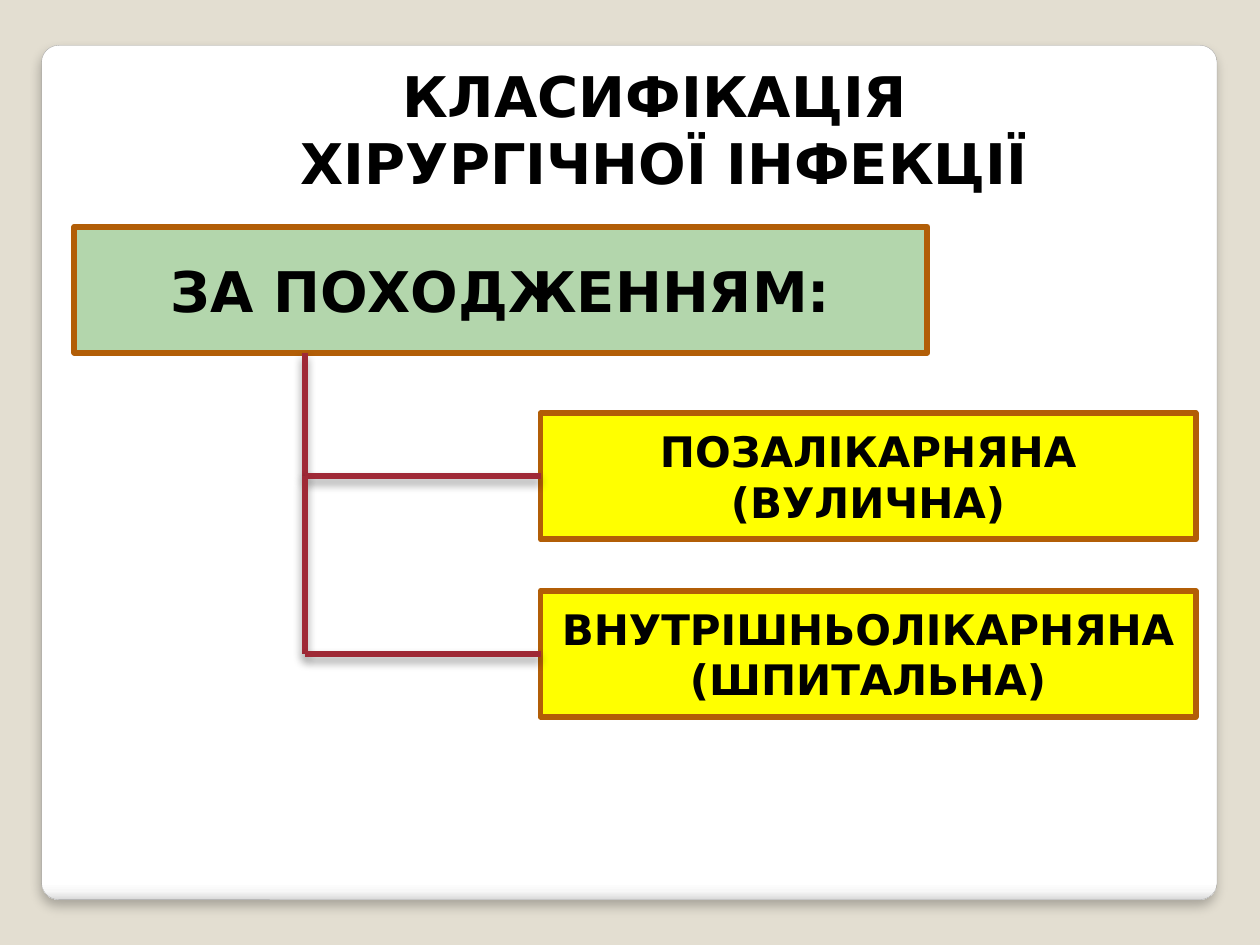
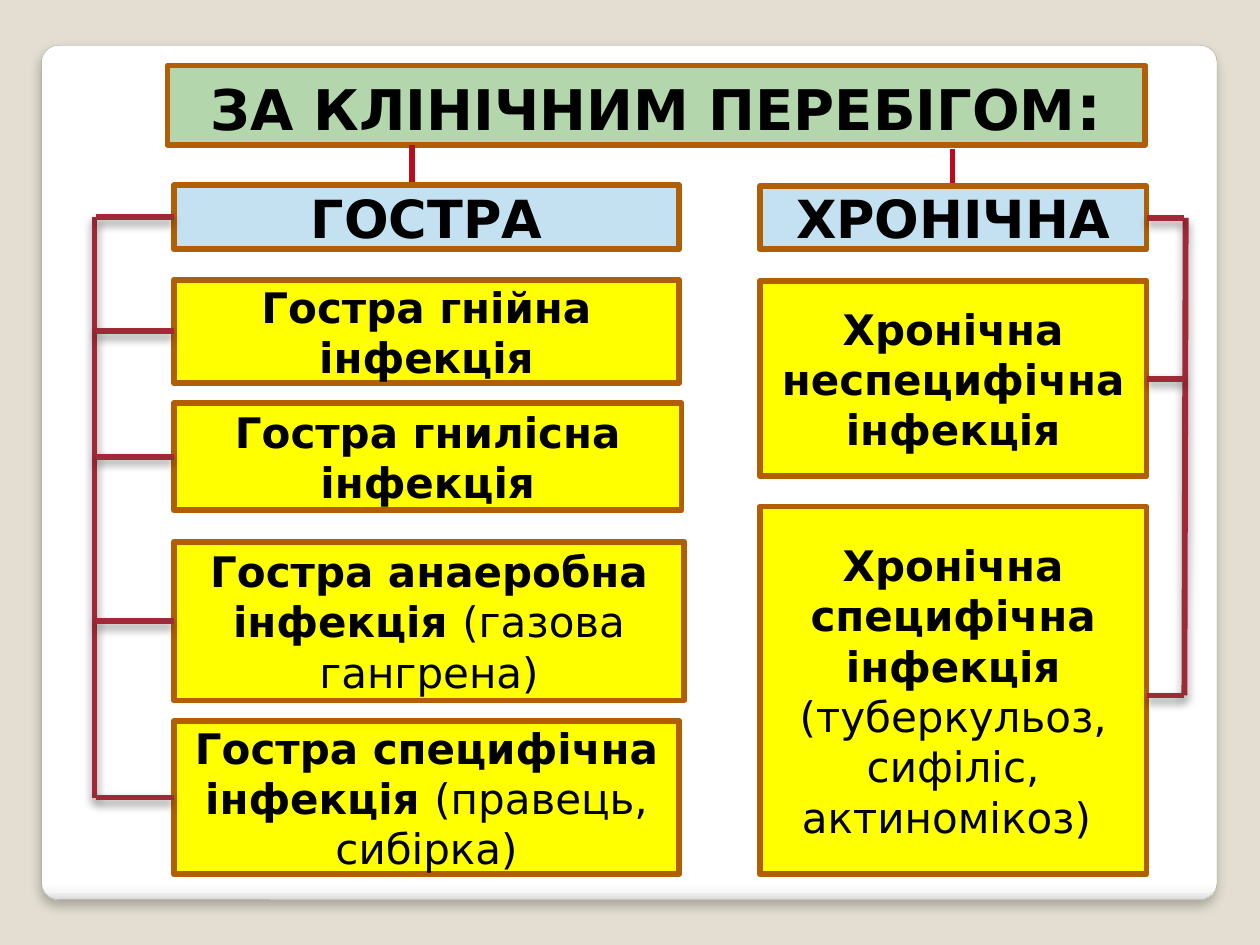
from pptx import Presentation
from pptx.dml.color import RGBColor
from pptx.enum import shapes, text
from pptx.oxml import parse_xml
from pptx.oxml.ns import nsdecls
from pptx.util import Inches, Pt

BEIGE = RGBColor(0xE3, 0xDE, 0xD1)
GREY = RGBColor(0xA4, 0xA4, 0xA4)
GREEN = RGBColor(0xB3, 0xD6, 0xAC)
BLUE = RGBColor(0xC4, 0xE1, 0xF2)
YELLOW = RGBColor(0xFF, 0xFF, 0x00)
BROWN = RGBColor(0xB2, 0x5E, 0x07)
MAROON = RGBColor(0x9F, 0x29, 0x36)
RED = RGBColor(0xBC, 0x0B, 0x1F)
BLACK = RGBColor(0, 0, 0)
FONT = "DejaVu Sans"
STOPS = [(0, "FFFFFF"), (98, "FFFFFF"), (99, "F7F7F7"), (100, "DADADA")]
EFFECT = f"<a:effectLst {nsdecls('a')}>%s</a:effectLst>"
SHADOW = EFFECT % (
    '<a:outerShdw blurRad="%d" dist="%d" dir="5400000" rotWithShape="0">'
    '<a:srgbClr val="000000"><a:alpha val="%d"/></a:srgbClr></a:outerShdw>')


def write(s, x, y, w, h, words, size=24, fill=None, tail="", tail_size=None, tail_bold=False):
    at = [Inches(v) for v in (x, y, w, h)]
    if fill is None:
        sp = s.shapes.add_textbox(*at)
        sp.text_frame.auto_size = text.MSO_AUTO_SIZE.SHAPE_TO_FIT_TEXT
    else:
        sp = s.shapes.add_shape(shapes.MSO_SHAPE.RECTANGLE, *at)
        sp.shadow.inherit = False
        sp.fill.solid()
        sp.fill.fore_color.rgb = fill
        sp.line.color.rgb = BROWN
        sp.line.width = Pt(3.35)
        sp.text_frame.vertical_anchor = text.MSO_ANCHOR.MIDDLE
    tf = sp.text_frame
    tf.word_wrap = True
    for i, part in enumerate(words.split("\n")):
        p = tf.add_paragraph() if i else tf.paragraphs[0]
        p.alignment = text.PP_ALIGN.CENTER
        runs = [(part, size, True)]
        if tail:
            runs.append((tail, tail_size or size, tail_bold))
        for run_text, run_size, bold in runs:
            r = p.add_run()
            r.text = run_text
            r.font.name = FONT
            r.font.size = Pt(run_size)
            r.font.bold = bold
            r.font.color.rgb = BLACK
    return sp


def line(s, x1, y1, x2, y2, color=MAROON, width=3.35, shadow=True, box=None, side=1):
    c = s.shapes.add_connector(shapes.MSO_CONNECTOR.STRAIGHT,
                               Inches(x1), Inches(y1), Inches(x2), Inches(y2))
    if box is not None:
        c.end_connect(box, side)
    c.line.color.rgb = color
    c.line.width = Pt(width)
    effect = SHADOW % (Pt(5.2), Pt(3), 40000) if shadow else EFFECT % ""
    c._element.spPr.append(parse_xml(effect))


prs = Presentation()
prs.slide_width = Inches(10)
prs.slide_height = Inches(7.5)

for _ in range(2):
    s = prs.slides.add_slide(prs.slide_layouts[6])
    s.background.fill.solid()
    s.background.fill.fore_color.rgb = BEIGE
    panel = s.shapes.add_shape(shapes.MSO_SHAPE.ROUNDED_RECTANGLE,
                               Inches(0.33), Inches(0.36), Inches(9.33), Inches(6.78))
    panel.adjustments[0] = 0.02
    panel.fill.gradient()
    panel.fill.gradient_angle = 270
    stops = "".join(f'<a:gs pos="{pos * 1000}"><a:srgbClr val="{color}"/></a:gs>'
                    for pos, color in STOPS)
    grad = panel._element.spPr.find(".//{*}gsLst")
    grad.getparent().replace(grad, parse_xml(f"<a:gsLst {nsdecls('a')}>{stops}</a:gsLst>"))
    panel.line.color.rgb = GREY
    panel.line.width = Pt(0.16)
    panel._element.spPr.append(parse_xml(SHADOW % (Pt(6), Pt(4), 25000)))

origin, course = prs.slides

write(origin, 1.77, 0.44, 7.01, 1.18, "КЛАСИФІКАЦІЯ \nХІРУРГІЧНОЇ ІНФЕКЦІЇ", size=32)
write(origin, 0.59, 1.8, 6.77, 1, "ЗА ПОХОДЖЕННЯМ:", size=32, fill=GREEN)
trunk_x, trunk_y = 2.42, 2.8
for y, words in [(3.28, "ПОЗАЛІКАРНЯНА (ВУЛИЧНА)"),
                 (4.69, "ВНУТРІШНЬОЛІКАРНЯНА\n(ШПИТАЛЬНА)")]:
    sp = write(origin, 4.29, y, 5.2, 1, words, fill=YELLOW)
    mid = y + 0.5
    line(origin, trunk_x, trunk_y, trunk_x, mid)
    line(origin, trunk_x, mid, 4.29, mid, box=sp)
    trunk_y = mid

write(course, 1.33, 0.52, 7.76, 0.63, "ЗА КЛІНІЧНИМ ПЕРЕБІГОМ", size=32, fill=GREEN,
      tail=":", tail_size=36, tail_bold=True)
line(course, 3.27, 1.15, 3.27, 1.47, color=RED, width=3, shadow=False)
line(course, 7.56, 1.18, 7.56, 1.48, color=RED, width=3, shadow=False)

acute_x, acute_trunk = 1.38, 0.76
line(course, 0.75, 1.72, 0.75, 6.33)
for y, w, h, words, tail, size, fill in [
    (1.47, 4.01, 0.51, "ГОСТРА", "", 30, BLUE),
    (2.22, 4.01, 0.82, "Гостра гнійна інфекція", "", 24, YELLOW),
    (3.2, 4.03, 0.85, "Гостра гнилісна інфекція", "", 24, YELLOW),
    (4.3, 4.05, 1.26, "Гостра анаеробна інфекція ", "(газова гангрена)", 24, YELLOW),
    (5.72, 4.01, 1.22, "Гостра специфічна інфекція ", "(правець, сибірка)", 24, YELLOW),
]:
    sp = write(course, acute_x, y, w, h, words, size=size, fill=fill, tail=tail)
    mid = y + h / 2
    line(course, acute_trunk, mid, acute_x, mid, box=sp)

chronic_x, chronic_w, chronic_trunk = 6.03, 3.07, 9.4
line(course, 9.41, 1.73, chronic_trunk, 5.52)
for y, h, words, tail, size, fill, mid in [
    (1.48, 0.5, "ХРОНІЧНА", "", 30, BLUE, None),
    (2.23, 1.55, "Хронічна неспецифічна інфекція", "", 24, YELLOW, None),
    (4.02, 2.92, "Хронічна специфічна інфекція ", "(туберкульоз, сифіліс, актиномікоз) ",
     24, YELLOW, 5.52),
]:
    sp = write(course, chronic_x, y, chronic_w, h, words, size=size, fill=fill, tail=tail)
    branch_y = mid or y + h / 2
    line(course, chronic_trunk, branch_y, chronic_x + chronic_w, branch_y,
         box=None if mid else sp, side=3)

prs.save("out.pptx")
